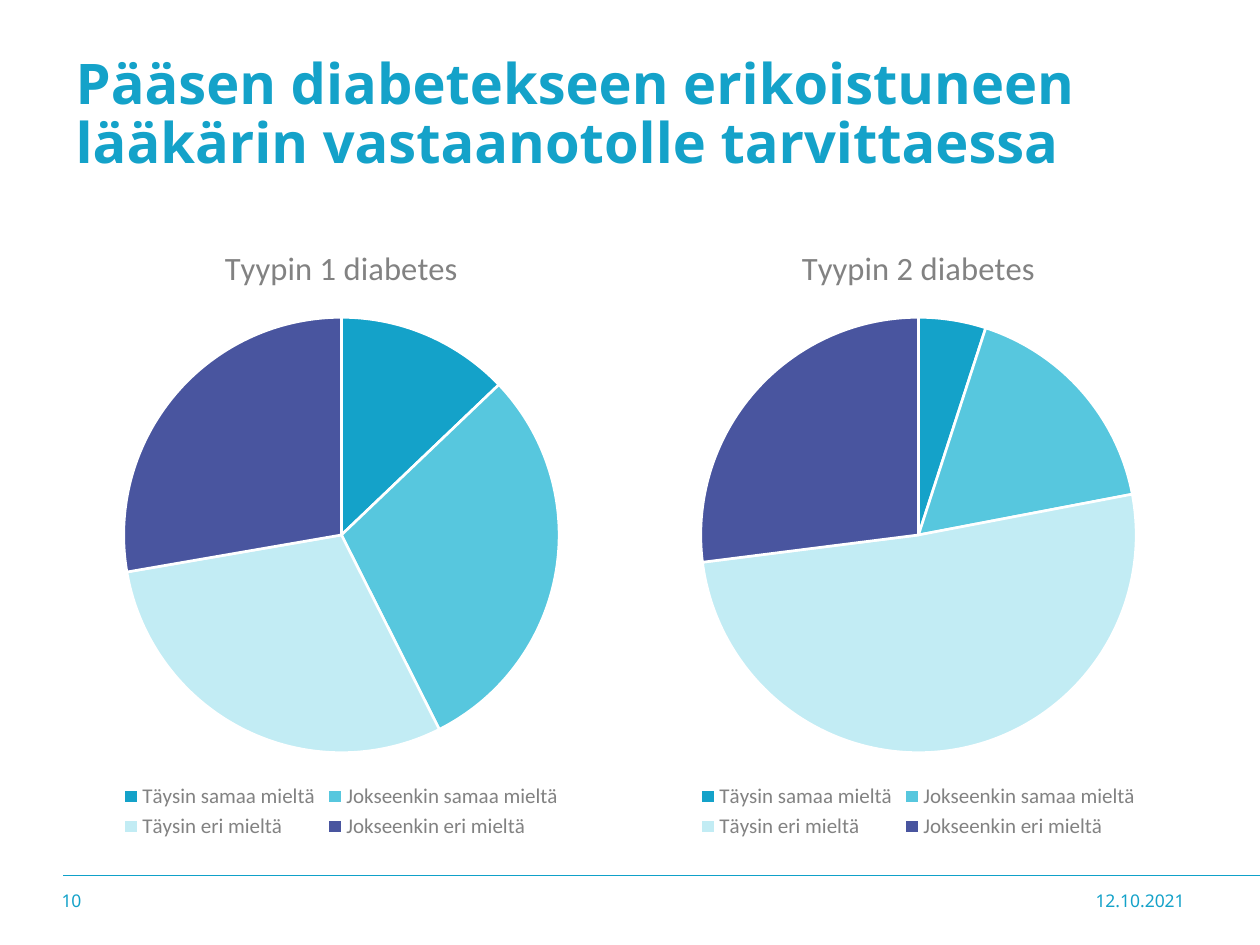
import dataclasses
import pptx
import pptx.chart.data
import pptx.dml.color
import pptx.enum.chart
import pptx.enum.shapes
import pptx.enum.text
import pptx.oxml
import pptx.util
from pptx.util import Inches


@dataclasses.dataclass(frozen=True)
class Theme:
    """Colours, fonts and type sizes of the deck."""
    main: str = "14A2C9"
    rule: str = "0FA1C9"
    grey: str = "828282"
    dark: str = "3F3F3F"
    white: str = "FFFFFF"
    wedges: tuple = ("14A2C9", "57C7DE", "C2ECF4", "49559F")
    head: str = "Noto Sans"
    body: str = "Calibri"
    title: float = 32
    label: float = 18.6
    key: float = 12
    base: float = 10
    foot: float = 10


THEME = Theme()
ANSWERS = ("Täysin samaa mieltä", "Jokseenkin samaa mieltä",
           "Täysin eri mieltä", "Jokseenkin eri mieltä")
PIES = (("Tyypin 1 diabetes", (13, 30, 30, 28)),
        ("Tyypin 2 diabetes", (5, 17, 51, 27)))


def rgb(code):
    """Turn a hex code into a colour."""
    return pptx.dml.color.RGBColor.from_string(code)


def style(font, name, size, color, bold=False):
    """Set the face, size, colour and weight of a font."""
    font.name = name
    font.size = pptx.util.Pt(size)
    font.color.rgb = rgb(color)
    font.bold = bold


def place(shape, box):
    """Move a shape to a box given in inches."""
    shape.left, shape.top, shape.width, shape.height = map(Inches, box)


def add_title(slide, box, text):
    """Fill the title placeholder."""
    title = slide.shapes.title
    place(title, box)
    frame = title.text_frame
    frame.text = text
    frame.word_wrap = True
    frame.auto_size = pptx.enum.text.MSO_AUTO_SIZE.NONE
    frame.vertical_anchor = pptx.enum.text.MSO_ANCHOR.MIDDLE
    para = frame.paragraphs[0]
    para.alignment = pptx.enum.text.PP_ALIGN.LEFT
    para.line_spacing = 0.88
    style(para.runs[0].font, THEME.head, THEME.title, THEME.main, True)


def add_pie(slide, box, name, values):
    """Draw one pie with its title and legend."""
    data = pptx.chart.data.CategoryChartData()
    data.categories = ANSWERS
    data.add_series(name, values)
    kind = pptx.enum.chart.XL_CHART_TYPE.PIE
    chart = slide.shapes.add_chart(kind, *map(Inches, box), data).chart
    style(chart.font, THEME.body, THEME.base, THEME.dark)
    chart.has_title = True
    frame = chart.chart_title.text_frame
    frame.text = name
    style(frame.paragraphs[0].runs[0].font, THEME.body, THEME.label, THEME.grey)
    chart.has_legend = True
    chart.legend.position = pptx.enum.chart.XL_LEGEND_POSITION.BOTTOM
    chart.legend.include_in_layout = False
    style(chart.legend.font, THEME.body, THEME.key, THEME.grey)
    plot = chart.plots[0]
    plot.vary_by_categories = True
    for index, color in enumerate(THEME.wedges):
        form = plot.series[0].points[index].format
        form.fill.solid()
        form.fill.fore_color.rgb = rgb(color)
        form.line.color.rgb = rgb(THEME.white)
        form.line.width = pptx.util.Pt(1.5)


def add_pies(slide, box):
    """Set the pies side by side with an even gap."""
    left, top, width, height = box
    gap = 0.16
    size = (width - gap * (len(PIES) - 1)) / len(PIES)
    for index, (name, values) in enumerate(PIES):
        spot = (left + index * (size + gap), top, size, height)
        add_pie(slide, spot, name, values)


def add_note(slide, box, text, align):
    """Write one small footer text."""
    frame = slide.shapes.add_textbox(*map(Inches, box)).text_frame
    frame.text = text
    frame.word_wrap = True
    frame.vertical_anchor = pptx.enum.text.MSO_ANCHOR.MIDDLE
    frame.paragraphs[0].alignment = align
    style(frame.paragraphs[0].runs[0].font, THEME.head, THEME.foot, THEME.main)


def add_footer(slide, box):
    """Draw the footer rule with the page number and date."""
    left, top, width, height = box
    kind = pptx.enum.shapes.MSO_CONNECTOR.STRAIGHT
    ends = map(Inches, (left, top, left + width, top))
    rule = slide.shapes.add_connector(kind, *ends)
    rule.line.color.rgb = rgb(THEME.rule)
    rule.line.width = pptx.util.Pt(0.25)
    flat = pptx.oxml.parse_xml(
        '<a:effectLst xmlns:a="http://schemas.openxmlformats.org/drawingml/2006/main"/>')
    rule.element.spPr.append(flat)
    align = pptx.enum.text.PP_ALIGN
    add_note(slide, (left - 0.11, top, 0.74, height), "10", align.LEFT)
    add_note(slide, (left + 7.78, top, 1.22, height), "12.10.2021", align.RIGHT)


def main():
    """Build the slide and save it."""
    deck = pptx.Presentation()
    deck.slide_width, deck.slide_height = Inches(10), Inches(7.5)
    slide = deck.slides.add_slide(deck.slide_layouts[5])
    add_title(slide, (0.5, 0.3, 9, 1.25),
              "Pääsen diabetekseen erikoistuneen lääkärin vastaanotolle tarvittaessa")
    add_pies(slide, (0.5, 1.75, 9, 4.95))
    add_footer(slide, (0.5, 6.95, 9.5, 0.4))
    deck.save("out.pptx")


if __name__ == "__main__":
    main()
